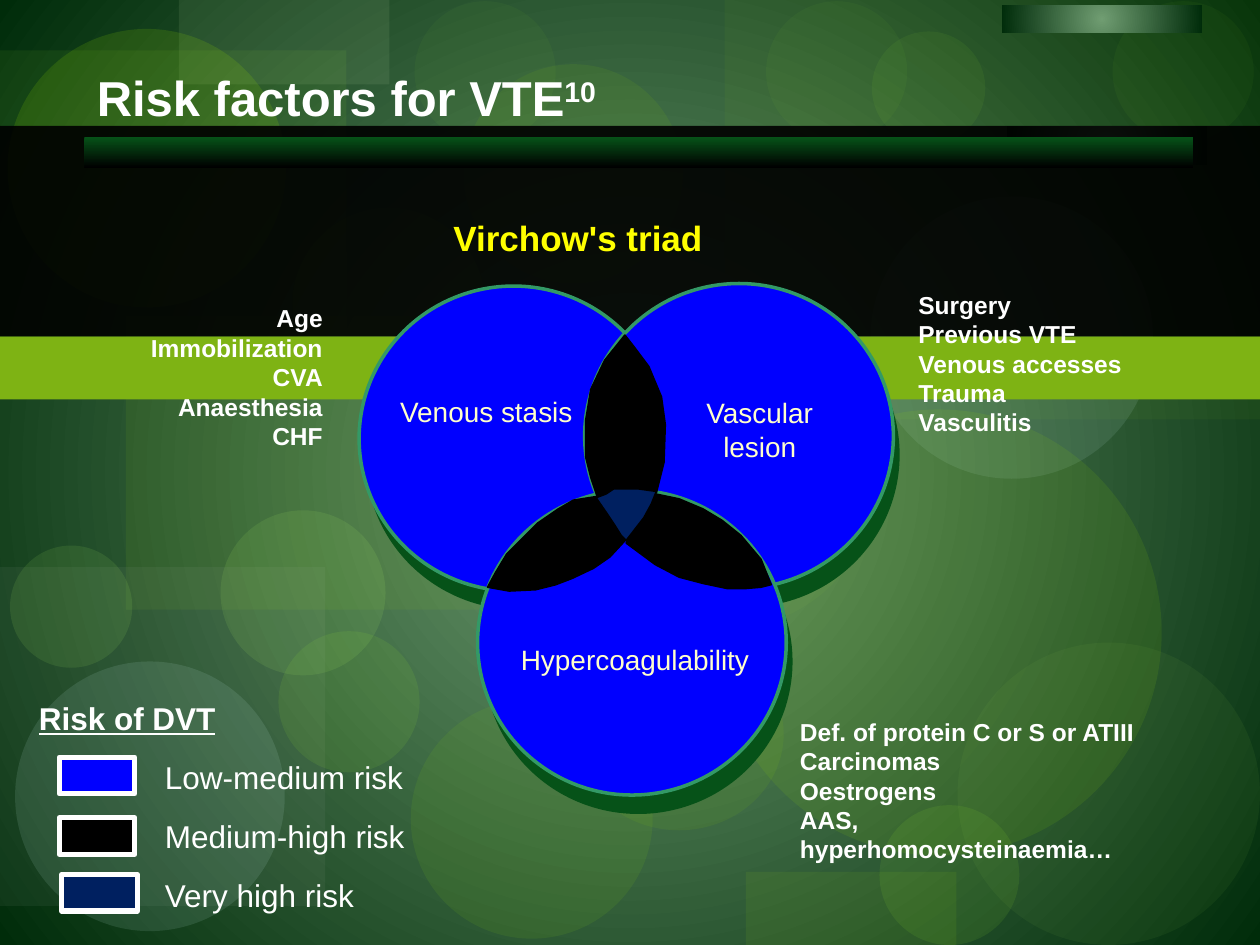
from lxml import etree
from pptx import Presentation
from pptx.dml.color import RGBColor
from pptx.enum.shapes import MSO_SHAPE
from pptx.enum.text import PP_ALIGN
from pptx.oxml.ns import qn
from pptx.util import Inches, Pt

RECTANGLE, OVAL = MSO_SHAPE.RECTANGLE, MSO_SHAPE.OVAL
LEFT, CENTER, RIGHT = PP_ALIGN.LEFT, PP_ALIGN.CENTER, PP_ALIGN.RIGHT
FONT = "Arial"
COLORS = {
    "glow": "709D72", "forest": "002C0A", "band": "7EB314", "shade": "065218",
    "low": "0000FF", "medium": "000000", "high": "002060", "outline": "339966",
    "white": "FFFFFF", "cream": "FFFFCC", "yellow": "FFFF00",
    "lime": "8FCB17", "leaf": "75BC1B", "gray": "ABB3AC", "moss": "86BE4B",
    "neon": "A5FF31", "mist": "C1E8E4", "green": "97E200", "pale": "C6E2AC",
    "spring": "B5FF67",
}
BACKDROP = [
    (RECTANGLE, 1, 2.51, 3, 2.33, "lime", 9), (OVAL, 3.26, 5.55, 1.92, 1.9, "leaf", 13),
    (RECTANGLE, 5.75, 0, 4.25, 3.33, "lime", 6), (RECTANGLE, 0, 4.5, 2.58, 2.69, "gray", 8),
    (OVAL, 4.57, 2.61, 2.38, 2.38, "moss", 8), (OVAL, 6.98, 6.39, 1.11, 1.11, "neon", 9),
    (OVAL, 6.91, 1.56, 2.24, 2.24, "mist", 11), (OVAL, 0.12, 5.25, 2.14, 2.14, "mist", 12),
    (OVAL, 2.21, 5.01, 1.12, 1.12, "neon", 9), (OVAL, 4.56, 5.06, 1.66, 1.53, "green", 8),
    (RECTANGLE, 0, 0.4, 2.75, 2.61, "neon", 7), (RECTANGLE, 1.42, 0, 1.67, 0.67, "pale", 10),
    (OVAL, 0.06, 0.23, 2.21, 2.21, "green", 15), (OVAL, 0.08, 4.33, 0.97, 0.97, "spring", 10),
    (OVAL, 2.32, 1.65, 1.53, 1.53, "neon", 9), (OVAL, 3.68, 0.51, 1.74, 1.74, "green", 8),
    (OVAL, 5.68, 3.25, 3.54, 3.54, "green", 10), (OVAL, 6.08, 0.01, 1.12, 1.12, "neon", 4),
    (OVAL, 7.6, 5.1, 2.4, 2.4, "moss", 8), (OVAL, 1.75, 4.05, 1.31, 1.31, "spring", 10),
    (OVAL, 6.92, 0.25, 0.9, 0.9, "neon", 6), (OVAL, 8.83, 0.01, 1.12, 1.12, "neon", 4),
    (RECTANGLE, 5.92, 6.92, 1.67, 0.58, "lime", 10), (OVAL, 3.29, 0.01, 1.12, 1.12, "neon", 4),
]
CIRCLES = [
    (2.85, 2.27, "Venous stasis", (2.94, 3.12, 1.84, 1.31), 0.85),
    (4.64, 2.25, "Vascular lesion", (5.21, 3.09, 1.64, 1.23), 1),
    (3.79, 3.89, "Hypercoagulability", (3.81, 5.05, 2.46, 0.5), 1),
]
OVERLAPS = [
    ("medium", [(4.96, 2.66), (4.8, 2.86), (4.69, 3.09), (4.65, 3.33), (4.65, 3.63),
                (4.69, 3.79), (4.74, 3.94), (4.89, 3.9), (5.02, 3.89), (5.14, 3.9),
                (5.21, 3.91), (5.27, 3.67), (5.28, 3.37), (5.25, 3.15), (5.15, 2.91),
                (5.03, 2.75)]),
    ("medium", [(4.96, 4.29), (4.83, 4.1), (4.74, 3.94), (4.55, 3.97), (4.43, 4.04),
                (4.27, 4.15), (4.15, 4.27), (4.02, 4.4), (3.93, 4.55), (3.87, 4.66),
                (4.04, 4.69), (4.25, 4.68), (4.41, 4.64), (4.54, 4.59), (4.71, 4.51),
                (4.84, 4.42)]),
    ("medium", [(6.12, 4.64), (6.04, 4.44), (5.88, 4.25), (5.73, 4.13), (5.58, 4.04),
                (5.39, 3.96), (5.2, 3.92), (5.12, 4.11), (5, 4.25), (4.97, 4.31),
                (5.2, 4.48), (5.39, 4.58), (5.58, 4.63), (5.77, 4.67), (5.92, 4.67),
                (6.04, 4.66)]),
    ("high", [(4.97, 4.29), (5.11, 4.11), (5.17, 4), (5.21, 3.9), (5.07, 3.88),
              (4.95, 3.88), (4.87, 3.88), (4.81, 3.92), (4.73, 3.95), (4.82, 4.08),
              (4.88, 4.17), (4.93, 4.25)]),
]
FACTORS = [
    ((7.19, 2.25, 1.85, 1.28), LEFT,
     ["Surgery", "Previous VTE", "Venous accesses", "Trauma", "Vasculitis"]),
    ((1.05, 2.36, 1.61, 1.26), RIGHT,
     ["Age", "Immobilization", "CVA", "Anaesthesia", "CHF"]),
    ((6.25, 5.64, 2.98, 1.04), LEFT,
     ["Def. of protein C or S or ATIII", "Carcinomas", "Oestrogens",
      "AAS, hyperhomocysteinaemia…"]),
]
SWATCHES = [(0.47, 6.01, "low"), (0.47, 6.49, "medium"), (0.49, 6.94, "high")]


def rgb(name):
    """Return the named colour."""
    return RGBColor.from_string(COLORS[name])


def set_gradient(fill, start, end):
    """Apply a two-colour gradient running downwards."""
    fill.gradient()
    fill.gradient_angle = 270
    for stop, name, position in zip(fill.gradient_stops, (start, end), (0, 1)):
        stop.color.rgb = rgb(name)
        stop.position = position


def set_radial(fill, properties):
    """Apply the green gradient that darkens outwards from the centre."""
    set_gradient(fill, "glow", "forest")
    gradient = properties.find(qn("a:gradFill"))
    gradient.remove(gradient.find(qn("a:lin")))
    radial = etree.SubElement(gradient, qn("a:path"), path="circle")
    etree.SubElement(radial, qn("a:fillToRect"), l="50000", t="50000", r="50000", b="50000")


def style(shape, color, line=None, width=1, opacity=100):
    """Set the fill, outline and opacity of a shape."""
    shape.shadow.inherit = False
    shape.fill.solid()
    shape.fill.fore_color.rgb = rgb(color)
    if opacity < 100:
        value = shape._element.spPr.find(qn("a:solidFill"))[0]
        etree.SubElement(value, qn("a:alpha"), val=str(opacity * 1000))
    if line:
        shape.line.color.rgb = rgb(line)
        shape.line.width = Pt(width)
    else:
        shape.line.fill.background()


def add_preset(shapes, kind, box, color, **options):
    """Add a styled preset shape."""
    shape = shapes.add_shape(kind, *map(Inches, box))
    style(shape, color, **options)
    return shape


def add_text(shapes, box, lines, size, color="white", bold=False, align=LEFT, spacing=1):
    """Add a text box with one paragraph a line and return its paragraphs."""
    frame = shapes.add_textbox(*map(Inches, box)).text_frame
    frame.word_wrap = True
    frame.text = "\n".join(lines)
    for paragraph in frame.paragraphs:
        paragraph.alignment = align
        paragraph.line_spacing = spacing
        paragraph.font.name = FONT
        paragraph.font.size = Pt(size)
        paragraph.font.bold = bold
        paragraph.font.color.rgb = rgb(color)
    return frame.paragraphs


def add_backdrop(slide):
    """Draw the gradient background, the soft shapes and the bands."""
    set_radial(slide.background.fill, slide.background._cSld.bg.bgPr)
    for kind, left, top, width, height, color, opacity in BACKDROP:
        add_preset(slide.shapes, kind, (left, top, width, height), color, opacity=opacity)
    for box in ((7.99, 1, 1.59, 0.31), (7.95, 0.04, 1.59, 0.22)):
        patch = add_preset(slide.shapes, RECTANGLE, box, "forest")
        set_radial(patch.fill, patch._element.spPr)
    add_preset(slide.shapes, RECTANGLE, (0, 2.67, 10, 0.5), "band")
    add_preset(slide.shapes, RECTANGLE, (0, 1, 10, 1.67), "medium", opacity=90)


def add_title(slide):
    """Write the title with its reference number above the gradient bar."""
    title = add_text(slide.shapes, (0.67, 0.49, 8.83, 0.58), ["Risk factors for VTE"], 28, bold=True)[0]
    reference = title.add_run()
    reference.text = "10"
    reference._r.get_or_add_rPr().set("baseline", "30000")
    bar = add_preset(slide.shapes, RECTANGLE, (0.67, 1.09, 8.8, 0.24), "shade")
    set_gradient(bar.fill, "shade", "medium")


def add_triad(slide):
    """Draw the three labelled circles and their overlaps as a group."""
    shapes = slide.shapes.add_group_shape().shapes
    for left, top, *_ in CIRCLES:
        add_preset(shapes, OVAL, (left + 0.05, top + 0.15, 2.45, 2.42), "shade")
    for left, top, label, box, spacing in CIRCLES:
        add_preset(shapes, OVAL, (left, top, 2.45, 2.42), "low", line="outline", width=2)
        add_text(shapes, box, [label], 16, "cream", align=CENTER, spacing=spacing)
    for color, points in OVERLAPS:
        start, *rest = [(Inches(x), Inches(y)) for x, y in points]
        builder = shapes.build_freeform(*start)
        builder.add_line_segments(rest, close=True)
        style(builder.convert_to_shape(), color, line="medium")


def add_legend(slide):
    """Write the risk legend beside its colour swatches."""
    lines = ["Risk of DVT", "Low-medium risk", "Medium-high risk", "Very high risk"]
    heading, *levels = add_text(slide.shapes, (0.21, 5.5, 4.61, 1.8), lines, 18)
    heading.font.bold = heading.font.underline = True
    heading.space_after = Pt(12)
    for level in levels:
        level.space_after = Pt(12)
        level._p.get_or_add_pPr().set("marL", str(Inches(1)))
    for left, top, color in SWATCHES:
        add_preset(slide.shapes, RECTANGLE, (left, top, 0.6, 0.29), color, line="white", width=3)


def main():
    """Build and save the slide."""
    presentation = Presentation()
    presentation.slide_width, presentation.slide_height = Inches(10), Inches(7.5)
    slide = presentation.slides.add_slide(presentation.slide_layouts[6])
    add_backdrop(slide)
    add_title(slide)
    add_triad(slide)
    add_text(slide.shapes, (3.5, 1.67, 2.6, 0.44), ["Virchow's triad"], 20, "yellow", bold=True)
    for box, align, lines in FACTORS:
        add_text(slide.shapes, box, lines, 14, bold=True, align=align)
    add_legend(slide)
    presentation.save("out.pptx")


if __name__ == "__main__":
    main()
